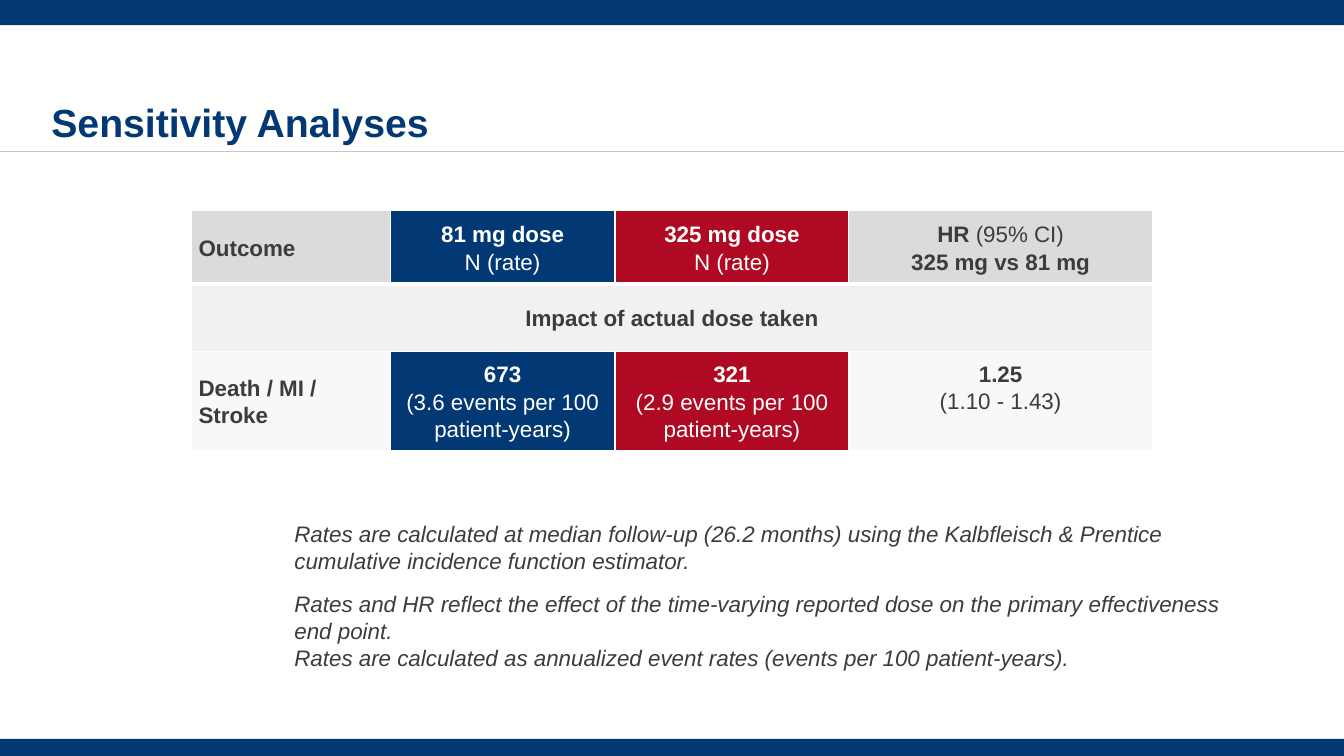
from dataclasses import dataclass
from lxml.etree import SubElement as Sub
from pptx import Presentation
from pptx.dml.color import RGBColor as RGB
from pptx.enum.shapes import MSO_CONNECTOR as Link, MSO_SHAPE as Shape
from pptx.enum.text import MSO_ANCHOR as Anchor, PP_ALIGN as Align
from pptx.oxml.ns import qn
from pptx.util import Inches, Pt


@dataclass(frozen=True)
class Theme:
    font: str = "Arial"
    navy: str = "023873"
    red: str = "AF0923"
    ink: str = "3B3C3E"
    white: str = "FFFFFE"
    rule: str = "C5C5C5"
    head: str = "DBDBDB"
    band: str = "F1F1F1"
    pale: str = "F8F8F8"
    title: int = 28
    body: int = 16


LOOK = Theme()
WIDE, HIGH = 13.33, 7.5
COLS = [1.97, 2.23, 2.32, 3.01]
ROWS = [0.73, 0.67, 0.98]
FILLS = [
    [LOOK.head, LOOK.navy, LOOK.red, LOOK.head],
    [LOOK.band] * 4,
    [LOOK.pale, LOOK.navy, LOOK.red, LOOK.pale],
]
CELLS = [
    [
        [[("Outcome", True)]],
        [[("81 mg dose", True)], [("N (rate)", False)]],
        [[("325 mg dose", True)], [("N (rate)", False)]],
        [[("HR ", True), ("(95% CI)", False)], [("325 mg vs 81 mg", True)]],
    ],
    [[[("Impact of actual dose taken", True)]], [], [], []],
    [
        [[("Death / MI / Stroke", True)]],
        [[("673", True)], [("(3.6 events per 100 patient-years)", False)]],
        [[("321", True)], [("(2.9 events per 100 patient-years)", False)]],
        [[("1.25", True)], [("(1.10 - 1.43)", False)]],
    ],
]
NOTES = [
    ("Rates are calculated at median follow-up (26.2 months) using the "
     "Kalbfleisch & Prentice cumulative incidence function estimator.", 0),
    ("Rates and HR reflect the effect of the time-varying reported dose on "
     "the primary effectiveness end point.", 12),
    ("Rates are calculated as annualized event rates (events per 100 "
     "patient-years).", 0),
]


def add_run(para, text, color, size=LOOK.body, bold=False, slant=False):
    run = para.add_run()
    run.text = text
    font = run.font
    font.name, font.size = LOOK.font, Pt(size)
    font.bold, font.italic = bold, slant
    font.color.rgb = RGB.from_string(color)


def next_para(frame, index):
    return frame.add_paragraph() if index else frame.paragraphs[0]


def add_bar(slide, top, height):
    bar = slide.shapes.add_shape(
        Shape.RECTANGLE, 0, Inches(top), Inches(WIDE), Inches(height))
    bar.shadow.inherit = False
    bar.fill.solid()
    bar.fill.fore_color.rgb = RGB.from_string(LOOK.navy)
    bar.line.fill.background()


def add_rule(slide, top):
    rule = slide.shapes.add_connector(
        Link.STRAIGHT, 0, Inches(top), Inches(WIDE), Inches(top))
    rule.line.color.rgb = RGB.from_string(LOOK.rule)
    rule.line.width = Pt(0.75)
    Sub(rule._element.spPr, qn("a:effectLst"))


def add_box(slide, left, top, width, height, pad=0):
    box = slide.shapes.add_textbox(*map(Inches, (left, top, width, height)))
    frame = box.text_frame
    frame.word_wrap = True
    frame.margin_left = frame.margin_right = 0
    frame.margin_top = frame.margin_bottom = Inches(pad)
    return frame


def add_title(slide, text):
    frame = add_box(slide, 0.51, 0.2, 11.14, 1.25)
    frame.vertical_anchor = Anchor.BOTTOM
    para = frame.paragraphs[0]
    para.line_spacing = 0.9
    add_run(para, text, LOOK.navy, LOOK.title, bold=True)


def add_notes(slide):
    frame = add_box(slide, 2.92, 5.11, 9.53, 1.62, 0.05)
    for index, (text, gap) in enumerate(NOTES):
        para = next_para(frame, index)
        para.space_before = Pt(gap)
        add_run(para, text, LOOK.ink, slant=True)


def set_edge(cell, side, width):
    line = Sub(cell._tc.get_or_add_tcPr(), qn(f"a:ln{side}"), w=str(Pt(width)))
    Sub(Sub(line, qn("a:solidFill")), qn("a:srgbClr"), val=LOOK.white)


def fill_cell(cell, lines, fill, row, col):
    thick = {(0, "B"), (1, "T")}
    for side in "LRTB":
        set_edge(cell, side, 3 if (row, side) in thick else 1)
    cell.fill.solid()
    cell.fill.fore_color.rgb = RGB.from_string(fill)
    cell.margin_left = cell.margin_right = Inches(0.07)
    cell.margin_top = cell.margin_bottom = 0
    cell.vertical_anchor = Anchor.MIDDLE
    color = LOOK.white if fill in (LOOK.navy, LOOK.red) else LOOK.ink
    for index, line in enumerate(lines):
        para = next_para(cell.text_frame, index)
        para.line_spacing = 1.1
        para.alignment = Align.LEFT if col == 0 and row != 1 else Align.CENTER
        for text, bold in line:
            add_run(para, text, color, bold=bold)


def add_grid(slide):
    frame = slide.shapes.add_table(
        len(ROWS), len(COLS), Inches(1.9), Inches(2.09),
        Inches(sum(COLS)), Inches(sum(ROWS)))
    table = frame.table
    for col, width in zip(table.columns, COLS):
        col.width = Inches(width)
    for row, height in zip(table.rows, ROWS):
        row.height = Inches(height)
    table.cell(1, 0).merge(table.cell(1, 3))
    for row, line in enumerate(CELLS):
        for col, text in enumerate(line):
            fill_cell(table.cell(row, col), text, FILLS[row][col], row, col)
    ratio = table.cell(2, 3)
    ratio.vertical_anchor = Anchor.TOP
    ratio.margin_top = Inches(0.08)


def main():
    deck = Presentation()
    deck.slide_width, deck.slide_height = Inches(WIDE), Inches(HIGH)
    slide = deck.slides.add_slide(deck.slide_layouts[6])
    back = slide.background.fill
    back.solid()
    back.fore_color.rgb = RGB.from_string(LOOK.white)
    add_rule(slide, 1.5)
    add_bar(slide, 0, 0.25)
    add_bar(slide, 7.33, 0.17)
    add_title(slide, "Sensitivity Analyses")
    add_grid(slide)
    add_notes(slide)
    deck.save("out.pptx")


if __name__ == "__main__":
    main()
